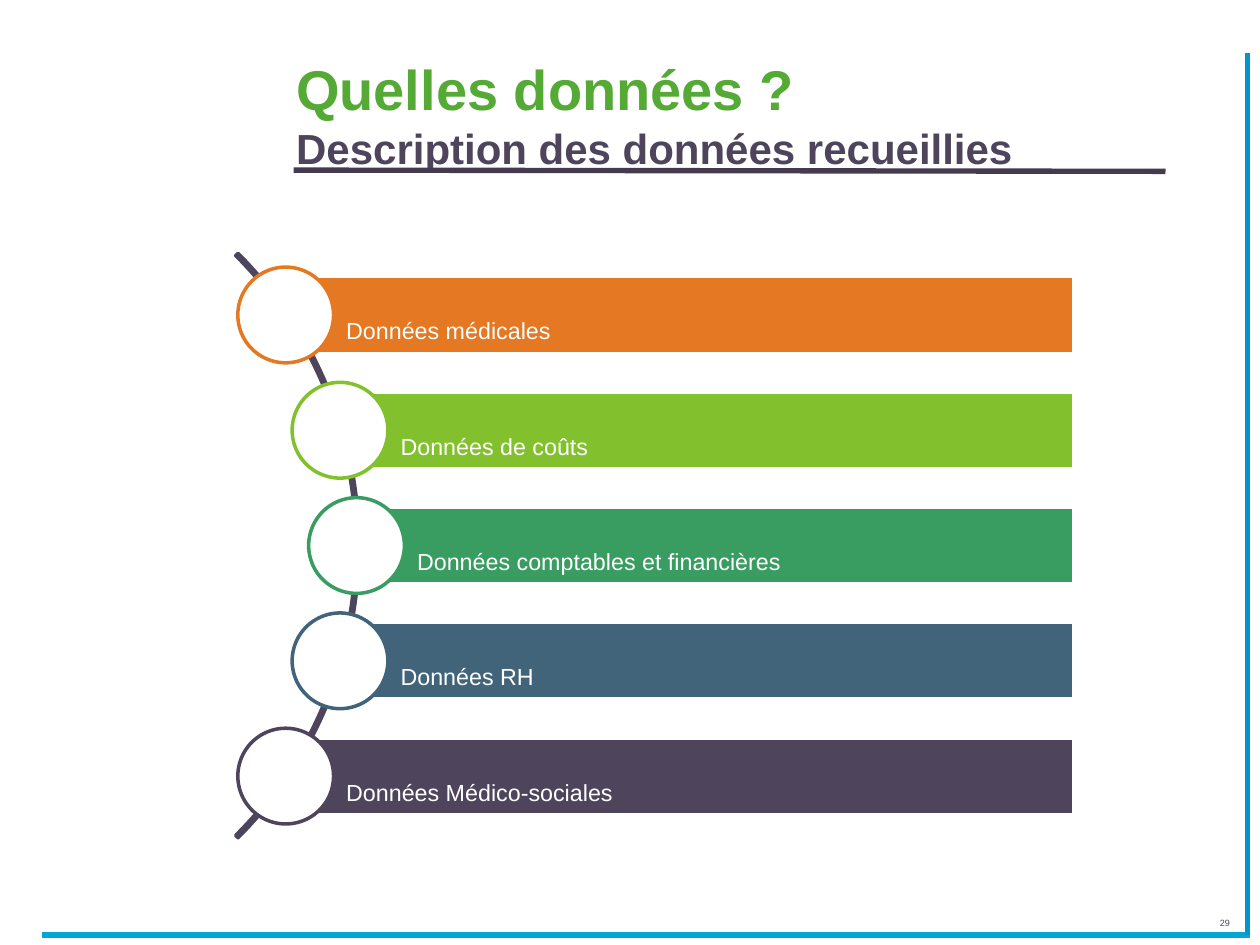
from math import sqrt

from lxml.etree import SubElement
from pptx import Presentation
from pptx.dml.color import RGBColor
from pptx.enum.shapes import MSO_CONNECTOR, MSO_SHAPE
from pptx.enum.text import MSO_ANCHOR, MSO_AUTO_SIZE, PP_ALIGN
from pptx.oxml.ns import qn
from pptx.util import Inches, Pt

TITLE_ONLY = 5
DARK, WHITE = "4E455D", "FFFFFF"


def color(value):
    return RGBColor.from_string(value)


class SlideBuilder:
    font = "Arial"
    outline = 2
    rule = 3.06

    def __init__(self, prs):
        self.s = prs.slides.add_slide(prs.slide_layouts[TITLE_ONLY])

    def run(self, p, text, size, hue, bold=False, subscript=False):
        r = p.add_run()
        r.text = text
        r.font.name, r.font.size, r.font.bold = self.font, Pt(size), bold
        r.font.color.rgb = color(hue)
        if subscript:
            r.font._element.set("baseline", "-25000")

    def title(self, box, heading, subheading):
        sp = self.s.shapes.title
        sp.left, sp.top, sp.width, sp.height = map(Inches, box)
        tf = sp.text_frame
        tf.auto_size = MSO_AUTO_SIZE.NONE
        tf.vertical_anchor = MSO_ANCHOR.BOTTOM
        p = tf.paragraphs[0]
        p.alignment = PP_ALIGN.LEFT
        self.run(p, heading, 32, "55A935", bold=True)
        p.add_line_break()
        self.run(p, subheading, 24, DARK, bold=True)

    def line(self, start, end, hue):
        sp = self.s.shapes.add_connector(
            MSO_CONNECTOR.STRAIGHT, *map(Inches, start + end))
        sp.line.color.rgb = color(hue)
        sp.line.width = Pt(self.rule)
        SubElement(sp._element.spPr, qn("a:effectLst"))

    def shape(self, kind, box, line, fill=None):
        sp = self.s.shapes.add_shape(kind, *map(Inches, box))
        sp.shadow.inherit = False
        if fill:
            sp.fill.solid()
            sp.fill.fore_color.rgb = color(fill)
        else:
            sp.fill.background()
        sp.line.color.rgb = color(line)
        sp.line.width = Pt(self.outline)
        return sp

    def arc(self, cx, cy, radius):
        sp = self.shape(MSO_SHAPE.BLOCK_ARC,
                        (cx - radius, cy - radius, 2 * radius, 2 * radius), DARK)
        # Start angle, end angle (100000ths) and band thickness
        for i, value in enumerate((189, 27, 0.004)):
            sp.adjustments[i] = value

    def bar(self, box, text, hue):
        sp = self.shape(MSO_SHAPE.RECTANGLE, box, WHITE, hue)
        tf = sp.text_frame
        tf.word_wrap = True
        tf.vertical_anchor = MSO_ANCHOR.MIDDLE
        tf.margin_left = Inches(0.48)
        tf.margin_top = tf.margin_right = tf.margin_bottom = Inches(0.06)
        p = tf.paragraphs[0]
        p.alignment = PP_ALIGN.LEFT
        p.line_spacing = 0.9
        self.run(p, text, 23, WHITE, subscript=True)

    def circle(self, cx, cy, size, hue):
        self.shape(MSO_SHAPE.OVAL,
                   (cx - size / 2, cy - size / 2, size, size), hue, WHITE)

    def page_number(self, box, text):
        tf = self.s.shapes.add_textbox(*map(Inches, box)).text_frame
        tf.word_wrap = True
        p = tf.paragraphs[0]
        p.alignment = PP_ALIGN.RIGHT
        self.run(p, text, 9, DARK, subscript=True)


def main():
    prs = Presentation()
    prs.slide_width, prs.slide_height = Inches(10), Inches(7.5)
    b = SlideBuilder(prs)

    # Frame lines and title
    b.line((2.33, 1.35), (9.25, 1.36), "453B50")
    b.line((0.33, 7.42), (9.92, 7.42), "02A7D5")
    b.line((9.9, 7.42), (9.9, 0.42), "0095CB")
    b.title((2.25, 0.33, 6.67, 1.09), "Quelles données ?",
            "Description des données recueillies")

    # Data types: evenly spaced bars starting on the arc
    categories = [
        ("Données médicales", "E47823"),
        ("Données de coûts", "82C12D"),
        ("Données comptables et financières", "399C61"),
        ("Données RH", "41647A"),
        ("Données Médico-sociales", DARK),
    ]
    arc_x, arc_y, radius = -0.43, 4.33, 3.28
    node_radius, step, right, height = 3.26, 0.915, 8.52, 0.61
    b.arc(arc_x, arc_y, radius)
    for i, (text, hue) in enumerate(categories):
        dy = (i - len(categories) // 2) * step
        x, y = arc_x + sqrt(node_radius ** 2 - dy ** 2), arc_y + dy
        b.bar((x, y - height / 2, right - x, height), text, hue)
        b.circle(x, y, 0.76, hue)

    # Page number
    b.page_number((9.45, 7.15, 0.41, 0.27), "29")

    prs.save("out.pptx")


if __name__ == "__main__":
    main()
